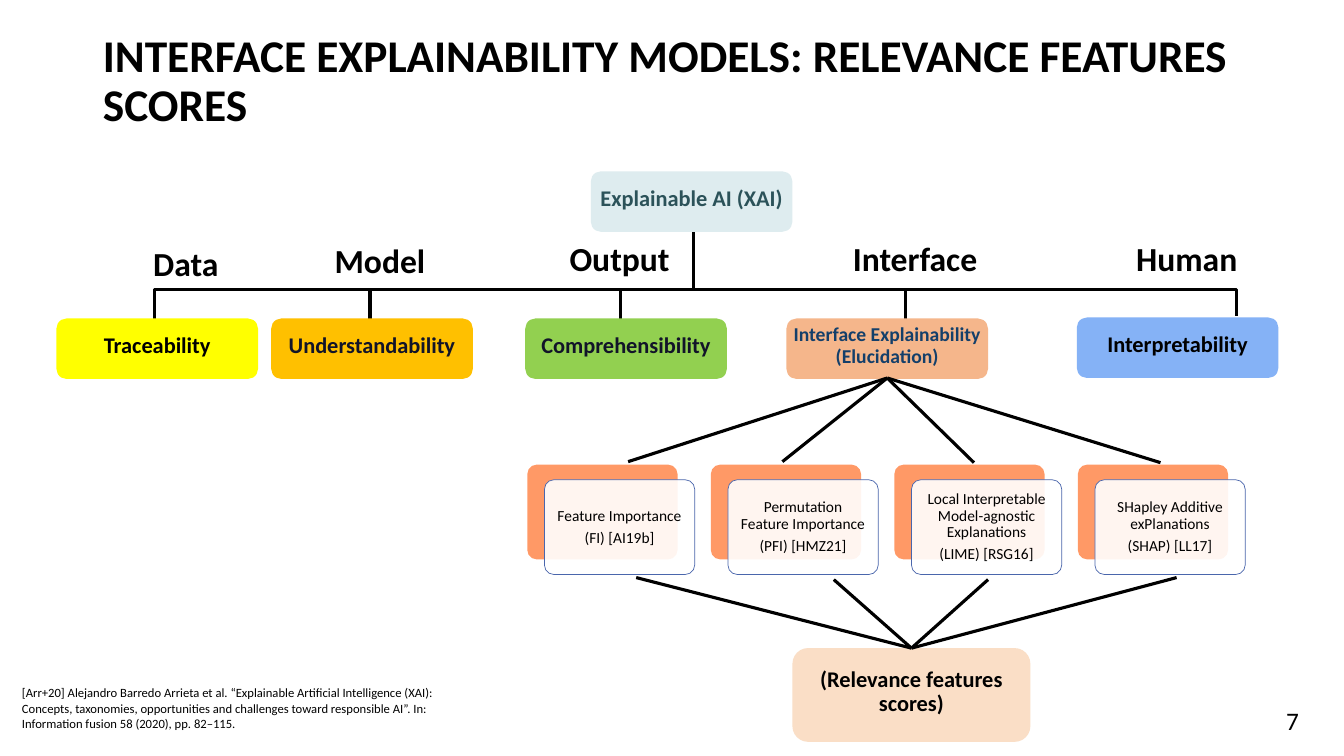
from lxml import etree
from pptx import Presentation
from pptx.dml.color import RGBColor
from pptx.enum.shapes import MSO_CONNECTOR, MSO_SHAPE
from pptx.enum.text import MSO_ANCHOR, PP_ALIGN
from pptx.oxml.ns import qn
from pptx.util import Inches, Pt

ROUND = MSO_SHAPE.ROUNDED_RECTANGLE
LINE, ELBOW = MSO_CONNECTOR.STRAIGHT, MSO_CONNECTOR.ELBOW
LEFT, MID, RIGHT = PP_ALIGN.LEFT, PP_ALIGN.CENTER, PP_ALIGN.RIGHT
TOP, CENTER = MSO_ANCHOR.TOP, MSO_ANCHOR.MIDDLE

# Content
TITLE = "INTERFACE EXPLAINABILITY MODELS: RELEVANCE FEATURES SCORES"
ROOT = "Explainable AI (XAI)"
RESULT = "(Relevance features scores)"
SOURCE = ("[Arr+20] Alejandro Barredo Arrieta et al. “Explainable Artificial "
          "Intelligence (XAI): Concepts, taxonomies, opportunities and challenges "
          "toward responsible AI”. In: Information fusion 58 (2020), pp. 82–115.")
PAGE = "7"

# label, label x, label y, box text, box x, box y, fill, ink, size
BRANCHES = [
    ("Data", 1.42, 2.36, "Traceability", 0.56, 3.16, "yellow", "black", 16),
    ("Model", 3.22, 2.33, "Understandability", 2.69, 3.16, "amber", "navy", 16),
    ("Output", 5.55, 2.31, "Comprehensibility", 5.21, 3.16, "green", "navy", 16),
    ("Interface", 8.36, 2.31, "Interface Explainability (Elucidation)",
     7.8, 3.16, "peach", "blue", 14),
    ("Human", 11.17, 2.31, "Interpretability", 10.68, 3.15, "sky", "black", 16),
]
# method, citation, end of line from above, start of line below
METHODS = [
    ("Feature Importance", "(FI) [AI19b]", (6.23, 4.58), (6.31, 5.73)),
    ("Permutation Feature Importance", "(PFI) [HMZ21]", (7.76, 4.58), (8.27, 5.75)),
    ("Local Interpretable Model-agnostic Explanations", "(LIME) [RSG16]",
     (9.66, 4.59), (9.8, 5.75)),
    ("SHapley Additive exPlanations", "(SHAP) [LL17]", (11.51, 4.59), (11.67, 5.73)),
]
COLORS = {
    "black": "000000", "white": "FFFFFF", "navy": "121429", "blue": "143F6A",
    "teal": "2B5259", "mist": "DEECEF", "yellow": "FFFF00", "amber": "FFC000",
    "green": "92D050", "peach": "F5B68B", "sky": "85B2F6", "orange": "FF9966",
    "cream": "FADEC6", "edge": "4A66AC",
}

# Grid in inches
BOX = (2, 0.6)
CARD = (1.49, 0.94)
CARD_X, CARD_Y, CARD_STEP = 5.23, 4.61, 1.82
SHIFT_X, SHIFT_Y = 0.17, 0.15
BAR_Y, ROOT_X = 2.87, 6.88
FORK, JOIN = (8.8, 3.75), (9.04, 6.43)
NODE_PAD = (0.01, 0.01, 0.01, 0.06)
CARD_PAD = (0.08,) * 4

deck = Presentation()
deck.slide_width, deck.slide_height = Inches(13.33), Inches(7.5)
slide = deck.slides.add_slide(deck.slide_layouts[5])


def tint(name):
    return RGBColor.from_string(COLORS[name])


def write(shape, *lines, size=16, bold=False, ink="black", align=LEFT,
          anchor=TOP, pad=(0.1, 0.05, 0.1, 0.05), lead=1.0, after=0):
    frame = shape.text_frame
    frame.word_wrap = True
    frame.vertical_anchor = anchor
    (frame.margin_left, frame.margin_top,
     frame.margin_right, frame.margin_bottom) = map(Inches, pad)
    for i, line in enumerate(lines):
        para = frame.add_paragraph() if i else frame.paragraphs[0]
        para.alignment, para.line_spacing = align, lead
        para.space_after = Pt(after)
        run = para.add_run()
        run.text = line
        run.font.name, run.font.size, run.font.bold = "Calibri", Pt(size), bold
        run.font.color.rgb = tint(ink)


def label(text, x, y, w, h, **style):
    write(slide.shapes.add_textbox(*map(Inches, (x, y, w, h))), text, **style)


def panel(x, y, w, h, fill, edge=None, curve=0.1667):
    shape = slide.shapes.add_shape(ROUND, *map(Inches, (x, y, w, h)))
    shape.shadow.inherit = False
    shape.adjustments[0] = curve
    shape.fill.solid()
    shape.fill.fore_color.rgb = tint(fill)
    if edge:
        shape.line.color.rgb = tint(edge)
        shape.line.width = Pt(0.5)
    else:
        shape.line.fill.background()
    return shape


def node(text, x, y, w, h, fill, ink="black", size=16):
    write(panel(x, y, w, h, fill), text, size=size, bold=True, ink=ink,
          align=MID, anchor=CENTER, pad=NODE_PAD, lead=0.9)


def link(start, end, kind=LINE):
    wire = slide.shapes.add_connector(kind, *map(Inches, (*start, *end)))
    wire.line.color.rgb = tint("black")
    wire.line.width = Pt(2.25)
    props = wire._element.spPr
    etree.SubElement(props, qn("a:effectLst"))
    if kind == ELBOW:  # bend at the far end
        guides = props.find(qn("a:prstGeom")).find(qn("a:avLst"))
        etree.SubElement(guides, qn("a:gd"), name="adj1", fmla="val 100000")


# Title
title = slide.shapes.title
title.left, title.top, title.width, title.height = map(Inches, (0.92, 0.47, 11.5, 0.7))
write(title, TITLE, size=32.4, bold=True, anchor=CENTER, lead=0.9)

# Tree lines
link((ROOT_X, BAR_Y), (ROOT_X, 1.96))
for x, y in ((1.53, 3.16), (12.26, 3.14)):
    link((6.82, BAR_Y), (x, y), ELBOW)
for x in (3.67, 6.15, 8.98):
    link((x, BAR_Y), (x, 3.28))

# Root and branches
node(ROOT, 5.86, 1.7, *BOX, "mist", "teal")
for name, lx, ly, text, x, y, fill, ink, size in BRANCHES:
    label(name, lx, ly, 1.81, 0.5, size=24, bold=True)
    node(text, x, y, *BOX, fill, ink, size)

# Methods, each a white card over an orange one
node(RESULT, 7.86, 6.43, 2.36, 0.93, "cream")
for i, (name, cite, top, low) in enumerate(METHODS):
    x = CARD_X + i * CARD_STEP
    panel(x, CARD_Y, *CARD, "orange", curve=0.1)
    card = panel(x + SHIFT_X, CARD_Y + SHIFT_Y, *CARD, "white", "edge", 0.1)
    shade = card._element.spPr.find(qn("a:solidFill"))[0]
    etree.SubElement(shade, qn("a:alpha"), val="90000")
    write(card, name, cite, size=11, align=MID, anchor=CENTER,
          pad=CARD_PAD, lead=0.9, after=3.85)
    link(FORK, top)
    link(JOIN, low)

# Source and page number
label(SOURCE, 0.12, 6.75, 4.57, 0.56, size=9)
label(PAGE, 12.42, 6.95, 0.56, 0.4, size=18, align=RIGHT)

deck.save("out.pptx")
